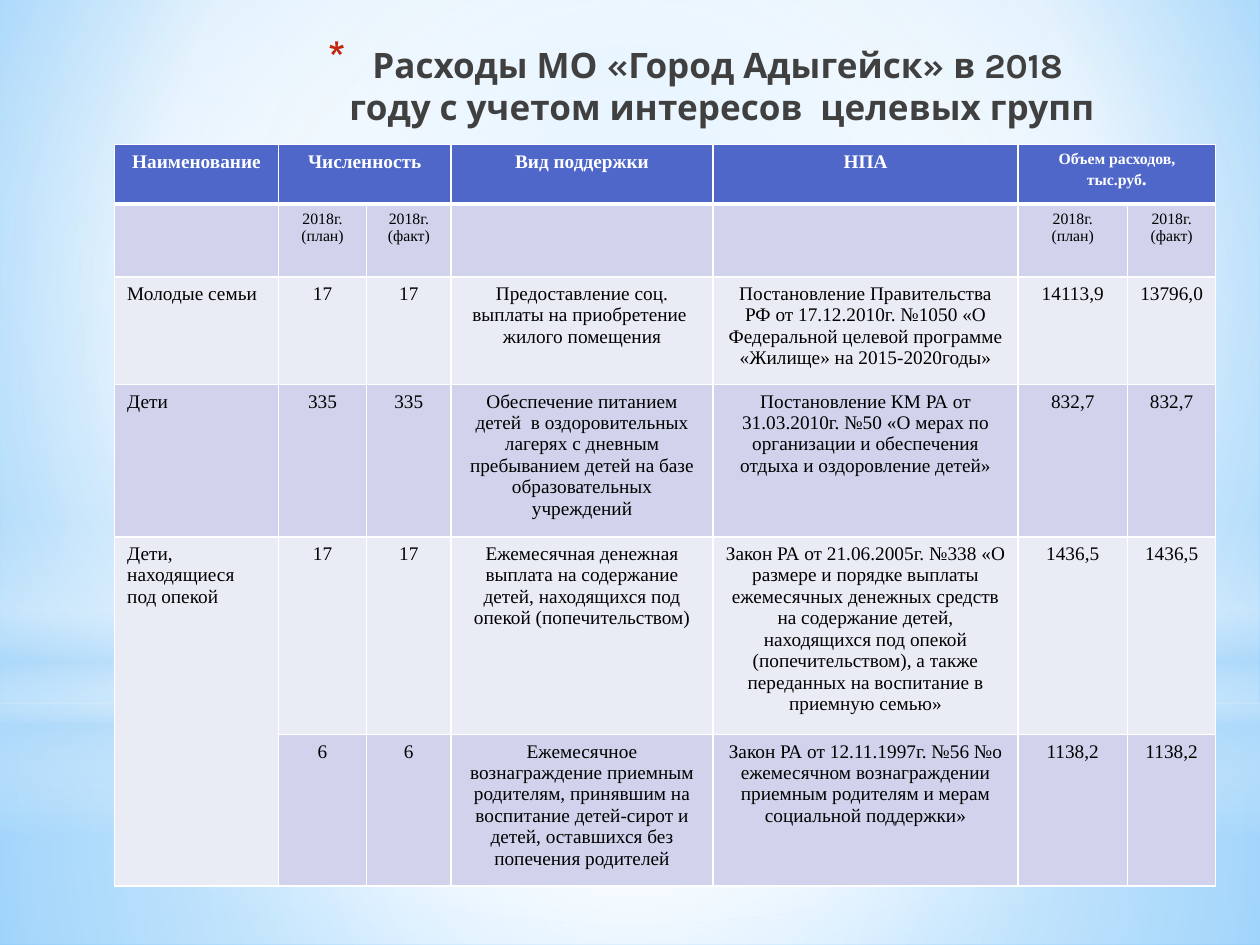
from dataclasses import dataclass

from lxml import etree
from pptx import Presentation
from pptx import util as u
from pptx.dml.color import RGBColor
from pptx.enum import shapes, text
from pptx.oxml.ns import nsdecls, qn


@dataclass(frozen=True)
class Theme:
    head: str = "4E67C8"
    bands: tuple = ("D0D3EB", "E9EBF5")
    white: str = "FFFFFF"
    ink: str = "000000"
    grey: str = "404040"
    mark: str = "C3260C"
    haze: str = "B4DCFA"
    face: str = "Times New Roman"
    title: str = "Karla"
    big: int = 20
    body: int = 11
    small: int = 9


T = Theme()
MID = (50, 50, 50, 50)

HEADS = ["Наименование", "Численность", "", "Вид поддержки", "НПА",
         "Объем расходов, тыс.руб", ""]
PLAN, FACT = "2018г. (план)", "2018г. (факт)"
ROWS = [
    HEADS,
    ["", PLAN, FACT, "", "", PLAN, FACT],
    ["Молодые семьи", "17", "17",
     "Предоставление соц. выплаты на приобретение  жилого помещения",
     "Постановление Правительства РФ от 17.12.2010г. №1050 «О Федеральной "
     "целевой программе «Жилище» на 2015-2020годы»",
     "14113,9", "13796,0"],
    ["Дети", "335", "335",
     "Обеспечение питанием детей  в оздоровительных лагерях с дневным "
     "пребыванием детей на базе образовательных учреждений",
     "Постановление КМ РА от 31.03.2010г. №50 «О мерах по организации и "
     "обеспечения отдыха и оздоровление детей»",
     "832,7", "832,7"],
    ["Дети, находящиеся под опекой", "17", "17",
     "Ежемесячная денежная выплата на содержание детей, находящихся под "
     "опекой (попечительством)",
     "Закон РА от 21.06.2005г. №338 «О размере и порядке выплаты ежемесячных "
     "денежных средств на содержание детей, находящихся под опекой "
     "(попечительством), а также переданных на воспитание в приемную семью»",
     "1436,5", "1436,5"],
    ["", "6", "6",
     "Ежемесячное вознаграждение приемным родителям, принявшим на воспитание "
     "детей-сирот и детей, оставшихся без попечения родителей",
     "Закон РА от 12.11.1997г. №56 №о ежемесячном вознаграждении приемным "
     "родителям и мерам социальной поддержки»",
     "1138,2", "1138,2"],
]
MERGES = [((0, 1), (0, 2)), ((0, 5), (0, 6)), ((4, 0), (5, 0))]
WIDTHS = [13, 7, 6.7, 20.8, 24.2, 8.7, 7]
HEIGHTS = [6.27, 7.73, 11.4, 16.13, 19.47, 14.93]


def blend(stops, focus=None):
    """Gradient of (place, colour, opacity): round a focus, or top to bottom."""
    marks = "".join(
        f'<a:gs pos="{at * 1000}"><a:srgbClr val="{tint}">'
        f'<a:alpha val="{seen * 1000}"/></a:srgbClr></a:gs>'
        for at, tint, seen in stops)
    kind = '<a:lin ang="5400000" scaled="0"/>'
    if focus:
        box = " ".join(f'{s}="{v * 1000}"' for s, v in zip("ltrb", focus))
        kind = f'<a:path path="circle"><a:fillToRect {box}/></a:path>'
    return etree.fromstring(f'<a:gradFill {nsdecls("a")} rotWithShape="1">'
                            f'<a:gsLst>{marks}</a:gsLst>{kind}</a:gradFill>')


def tint(props, *args):
    """Put a gradient in the place of a solid fill."""
    props.replace(props.find(qn("a:solidFill")), blend(*args))


class Page:
    """Draws on one slide; places and sizes are percent of the slide."""

    def __init__(self, theme):
        self.theme = theme
        self.deck = Presentation()
        self.deck.slide_width, self.deck.slide_height = u.Inches(10), u.Inches(7.5)
        self.slide = self.deck.slides.add_slide(self.deck.slide_layouts[6])

    def wide(self, part):
        return int(self.deck.slide_width * part / 100)

    def high(self, part):
        return int(self.deck.slide_height * part / 100)

    def frame(self, x, y, w, h):
        return self.wide(x), self.high(y), self.wide(w), self.high(h)

    def back(self, stops, focus):
        self.slide.background.fill.solid()
        tint(self.slide.element.find(".//" + qn("p:bgPr")), stops, focus)

    def glow(self, kind, place, stops, focus=None):
        item = self.slide.shapes.add_shape(kind, *self.frame(*place))
        item.shadow.inherit = False
        item.line.fill.background()
        item.fill.solid()
        tint(item.element.spPr, stops, focus)

    def style(self, run, face, size, hue, bold):
        font = run.font
        font.name, font.size, font.bold = face, u.Pt(size), bold
        font.color.rgb = RGBColor.from_string(hue)

    def title(self, place, words):
        t = self.theme
        frame = self.slide.shapes.add_textbox(*self.frame(*place)).text_frame
        frame.word_wrap = True
        para = frame.paragraphs[0]
        para.text = words
        para.alignment = text.PP_ALIGN.CENTER
        for run in para.runs:
            self.style(run, t.title, t.big, t.grey, True)
        props = para._p.get_or_add_pPr()
        props.set("marL", str(u.Inches(0.35)))
        props.set("indent", str(-u.Inches(0.35)))
        for tag in (f'buClr {nsdecls("a")}><a:srgbClr val="{t.mark}"/></a:buClr',
                    f'buSzPct {nsdecls("a")} val="128000"/',
                    f'buChar {nsdecls("a")} char="*"/'):
            props.append(etree.fromstring(f"<a:{tag}>"))

    def edge(self, cell, row):
        """White cell borders, thick under the header."""
        props = cell._tc.get_or_add_tcPr()
        thick = {"B": row == 0, "T": row == 1}
        for spot, side in enumerate("LRTB"):
            size = u.Pt(3 if thick.get(side) else 1)
            props.insert(spot, etree.fromstring(
                f'<a:ln{side} {nsdecls("a")} w="{size}"><a:solidFill>'
                f'<a:srgbClr val="{self.theme.white}"/></a:solidFill></a:ln{side}>'))

    def cell(self, cell, row, col, words):
        t = self.theme
        head = row == 0
        cell.fill.solid()
        hue = t.head if head else t.bands[(row - 1) % 2]
        cell.fill.fore_color.rgb = RGBColor.from_string(hue)
        self.edge(cell, row)
        para = cell.text_frame.paragraphs[0]
        para.text = words
        if head or col:
            para.alignment = text.PP_ALIGN.CENTER
        size = t.small if row == 1 or (head and col == 5) else t.body
        for run in para.runs:
            self.style(run, t.face, size, t.white if head else t.ink, head)

    def table(self, x, y, widths, heights, rows, merges):
        place = self.frame(x, y, sum(widths), sum(heights))
        grid = self.slide.shapes.add_table(len(rows), len(widths), *place).table
        for col, part in zip(grid.columns, widths):
            col.width = self.wide(part)
        for row, part in zip(grid.rows, heights):
            row.height = self.high(part)
        for r, line in enumerate(rows):
            for c, words in enumerate(line):
                self.cell(grid.cell(r, c), r, c, words)
        for start, end in merges:
            grid.cell(*start).merge(grid.cell(*end))
        return grid


def main():
    page = Page(T)
    rect, oval = shapes.MSO_SHAPE.RECTANGLE, shapes.MSO_SHAPE.OVAL
    white, haze = T.white, T.haze
    page.back([(0, "9ED5FF", 100), (60, white, 100), (100, "5BB9FF", 100)],
              (20, 10, 20, 60))
    page.glow(rect, (0, 74.4, 100, 25.6),
              [(0, white, 91), (37, white, 76), (100, haze, 79)], MID)
    page.glow(rect, (0, 0, 100, 74.4),
              [(0, white, 89), (48, white, 62), (100, haze, 79)], MID)
    page.glow(rect, (0, 55, 100, 33.3),
              [(0, white, 0), (29, white, 30), (45, haze, 40),
               (55, white, 26), (65, haze, 60), (100, white, 0)])
    page.glow(oval, (0, 23.3, 100, 74.4), [(0, white, 100), (56, white, 0)], MID)
    page.title((19.6, 3.9, 71.2, 18.9),
               "Расходы МО «Город Адыгейск» в 2018\v году с учетом интересов  целевых групп")
    grid = page.table(9.1, 15.3, WIDTHS, HEIGHTS, ROWS, MERGES)
    stop = grid.cell(0, 5).text_frame.paragraphs[0].add_run()
    stop.text = "."
    page.style(stop, T.face, T.body, T.white, True)
    page.deck.save("out.pptx")


if __name__ == "__main__":
    main()
